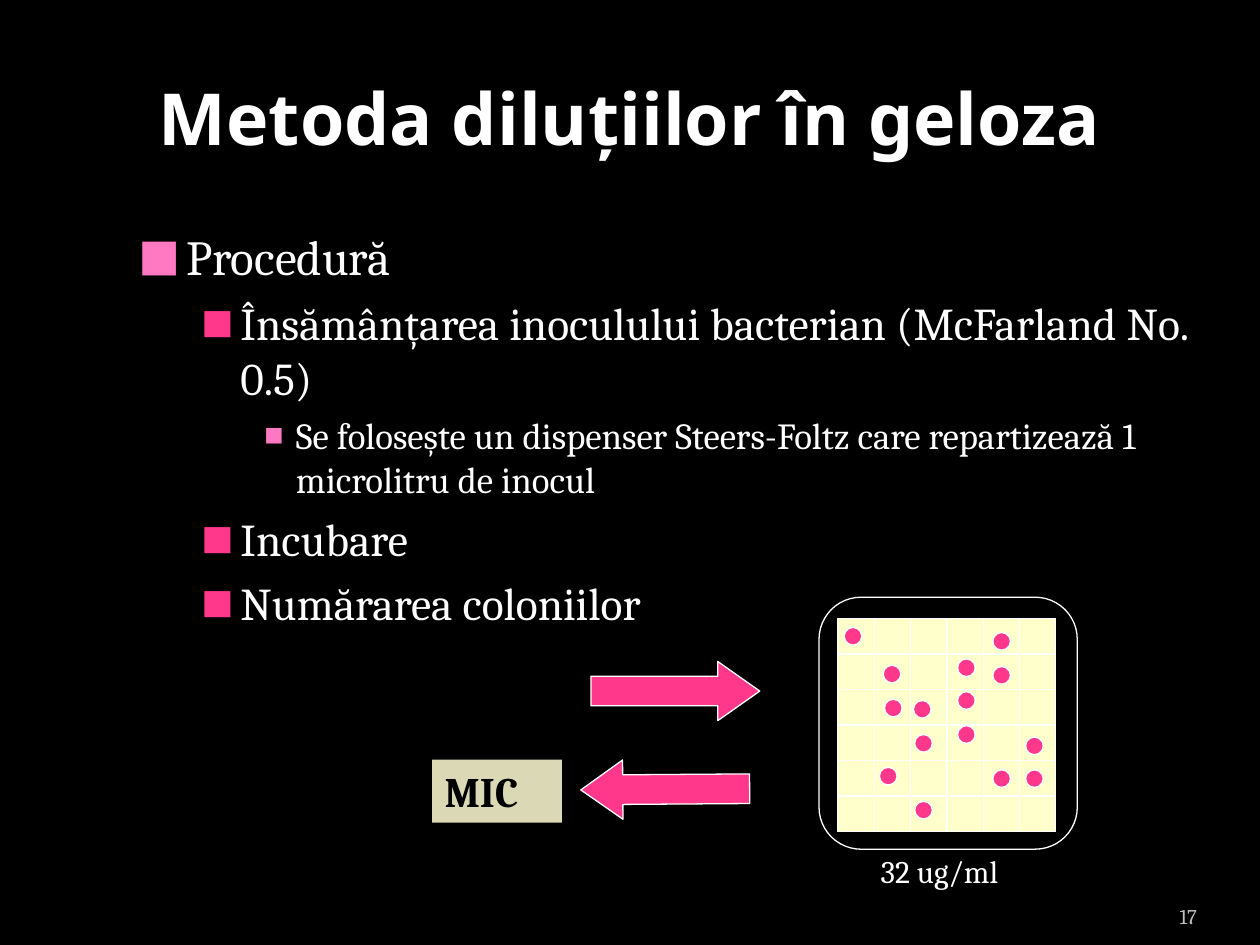
from lxml.etree import SubElement
from pptx import Presentation
from pptx.dml.color import RGBColor
from pptx.enum.shapes import MSO_CONNECTOR, MSO_SHAPE
from pptx.enum.text import MSO_ANCHOR, PP_ALIGN
from pptx.oxml.ns import qn
from pptx.util import Inches, Pt

COLORS = {
    "background": "000000",
    "white": "FFFFFF",
    "black": "000000",
    "number": "BDBDBD",
    "pink": "FF388C",
    "light_pink": "FF79C2",
    "agar": "FFFFCC",
    "label": "DBD9B5",
}
# Per level: text size, left indent, hanging indent, bullet colour, bullet size in percent
LEVELS = [
    (28, 0.38, 0.38, "light_pink", 90),
    (26, 0.81, 0.31, "pink", 75),
    (21, 1.25, 0.25, "light_pink", 55),
]
PROCEDURE = [
    (0, "Procedură"),
    (1, "Însămânțarea inoculului bacterian (McFarland No. 0.5)"),
    (2, "Se folosește un dispenser Steers-Foltz care repartizează 1 microlitru de inocul"),
    (1, "Incubare"),
    (1, "Numărarea coloniilor"),
]
AGAR_LEFT, AGAR_TOP, AGAR_WIDTH, AGAR_HEIGHT = 6.65, 4.91, 1.73, 1.69
CELLS = 6
COLONY_SIZE = 0.14
COLONIES = [
    (6.7, 4.98), (7.02, 5.55), (7.01, 5.28), (7.26, 5.83), (7.25, 5.56),
    (7.88, 5.29), (7.88, 5.02), (8.14, 6.11), (8.14, 5.85), (7.26, 6.36),
    (6.98, 6.09), (7.6, 5.23), (7.6, 5.76), (7.6, 5.49), (7.88, 6.11),
]


def rgb(name):
    return RGBColor.from_string(COLORS[name])


class SlideBuilder:
    body_font = "Cambria"
    title_font = "Noto Sans"
    line_width = Pt(0.75)

    def __init__(self, slide):
        self.slide = slide
        slide.background.fill.solid()
        slide.background.fill.fore_color.rgb = rgb("background")

    def style(self, paragraph, size, color="white", bold=False, font=None):
        paragraph.font.name = font or self.body_font
        paragraph.font.size = Pt(size)
        paragraph.font.bold = bold
        paragraph.font.color.rgb = rgb(color)

    def text(self, box, words, size, align=PP_ALIGN.LEFT, anchor=MSO_ANCHOR.TOP, **look):
        frame = self.slide.shapes.add_textbox(*map(Inches, box)).text_frame
        frame.word_wrap = True
        frame.vertical_anchor = anchor
        paragraph = frame.paragraphs[0]
        paragraph.text = words
        paragraph.alignment = align
        self.style(paragraph, size, **look)
        return frame

    def bullets(self, box, items):
        frame = self.slide.shapes.add_textbox(*map(Inches, box)).text_frame
        frame.word_wrap = True
        for index, (level, words) in enumerate(items):
            paragraph = frame.add_paragraph() if index else frame.paragraphs[0]
            size, indent, hanging, bullet_color, bullet_percent = LEVELS[level]
            paragraph.text = words
            paragraph.level = level
            paragraph.space_before = Pt(round(size * 0.22, 1))
            self.style(paragraph, size)
            properties = paragraph._p.get_or_add_pPr()
            properties.set("marL", str(Inches(indent)))
            properties.set("indent", str(-Inches(hanging)))
            bullet = [
                SubElement(properties, qn(tag))
                for tag in ("a:buClr", "a:buSzPct", "a:buFont", "a:buChar")
            ]
            SubElement(bullet[0], qn("a:srgbClr"), val=COLORS[bullet_color])
            bullet[1].set("val", str(bullet_percent * 1000))
            bullet[2].set("typeface", self.body_font)
            bullet[3].set("char", "■")
            # The schema wants the text defaults after the bullet settings
            properties.append(properties.find(qn("a:defRPr")))

    def shape(self, kind, box, fill, line="white", group=None, adjustments=(), rotation=0):
        shapes = (group or self.slide).shapes
        shape = shapes.add_shape(kind, *map(Inches, box))
        shape.shadow.inherit = False
        shape.rotation = rotation
        for index, value in enumerate(adjustments):
            shape.adjustments[index] = value
        if fill:
            shape.fill.solid()
            shape.fill.fore_color.rgb = rgb(fill)
        else:
            shape.fill.background()
        if line:
            shape.line.color.rgb = rgb(line)
            shape.line.width = self.line_width
        else:
            shape.line.fill.background()
        return shape

    def line(self, group, start, end):
        line = group.shapes.add_connector(
            MSO_CONNECTOR.STRAIGHT, *map(Inches, (*start, *end))
        )
        line.line.color.rgb = rgb("white")
        line.line.width = self.line_width
        SubElement(line._element.spPr, qn("a:effectLst"))

    def label(self, box, words, size):
        label = self.shape(MSO_SHAPE.RECTANGLE, box, "label", line=None)
        label.text_frame.vertical_anchor = MSO_ANCHOR.TOP
        paragraph = label.text_frame.paragraphs[0]
        paragraph.text = words
        paragraph.alignment = PP_ALIGN.LEFT
        self.style(paragraph, size, color="black", bold=True)

    def plate(self):
        """Draw the agar plate with its grid and colonies as one group."""
        plate = self.slide.shapes.add_group_shape()
        self.shape(MSO_SHAPE.ROUNDED_RECTANGLE, (6.5, 4.74, 2.05, 2), "black",
                   group=plate, adjustments=[0.167])
        self.shape(MSO_SHAPE.RECTANGLE, (AGAR_LEFT, AGAR_TOP, AGAR_WIDTH, AGAR_HEIGHT),
                   "agar", group=plate)
        right, bottom = AGAR_LEFT + AGAR_WIDTH, AGAR_TOP + AGAR_HEIGHT
        for step in range(1, CELLS):
            x = AGAR_LEFT + step * AGAR_WIDTH / CELLS
            y = AGAR_TOP + step * AGAR_HEIGHT / CELLS
            self.line(plate, (AGAR_LEFT, y), (right, y))
            self.line(plate, (x, AGAR_TOP), (x, bottom))
        for left, top in COLONIES:
            self.shape(MSO_SHAPE.OVAL, (left, top, COLONY_SIZE, COLONY_SIZE),
                       "pink", group=plate)


def main():
    presentation = Presentation()
    presentation.slide_width = Inches(10)
    presentation.slide_height = Inches(7.5)
    builder = SlideBuilder(presentation.slides.add_slide(presentation.slide_layouts[6]))

    page_number = builder.text((8.67, 7.02, 0.83, 0.4), "17", 12, PP_ALIGN.RIGHT,
                               MSO_ANCHOR.BOTTOM, color="number")
    page_number.margin_left = page_number.margin_right = 0
    builder.text((0.5, 0.3, 9, 1.25), "Metoda diluțiilor în geloza", 41, PP_ALIGN.CENTER,
                 MSO_ANCHOR.MIDDLE, bold=True, font=builder.title_font)
    builder.bullets((1, 1.75, 8.65, 4.95), PROCEDURE)

    arrow_head = [0.5, 0.709]
    builder.shape(MSO_SHAPE.RIGHT_ARROW, (4.69, 5.25, 1.34, 0.47), "pink",
                  adjustments=arrow_head)
    builder.plate()
    builder.shape(MSO_SHAPE.LEFT_ARROW, (4.61, 6.03, 1.34, 0.47), "pink",
                  adjustments=arrow_head, rotation=-0.4)
    builder.label((3.43, 6.03, 1.03, 0.5), "MIC", 24)
    builder.text((6.89, 6.71, 1.65, 0.4), "32 ug/ml", 18)

    presentation.save("out.pptx")


if __name__ == "__main__":
    main()
